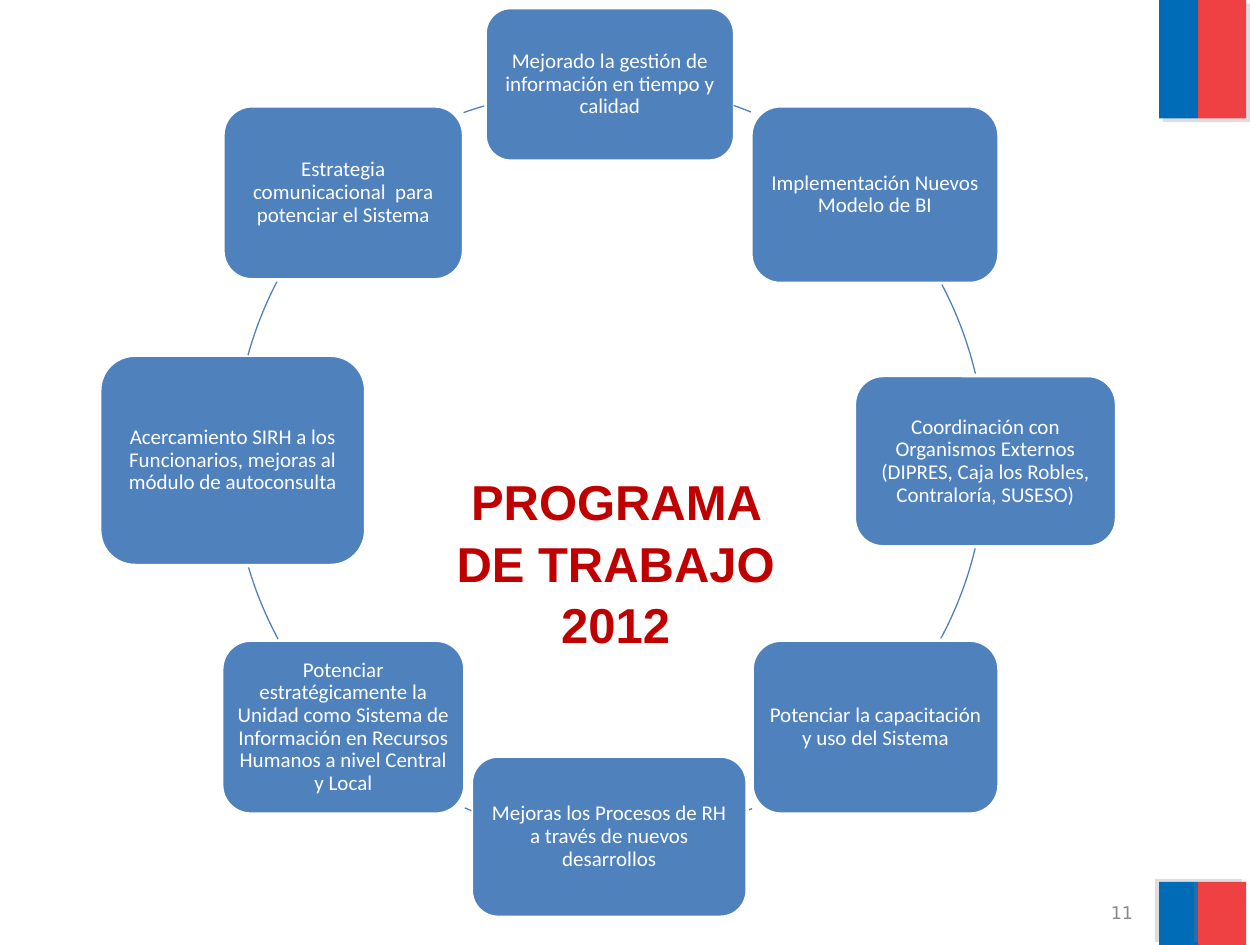
from dataclasses import dataclass
from typing import Any

from lxml import etree
from pptx import Presentation
from pptx import util as u
from pptx.dml.color import RGBColor
from pptx.enum import shapes, text
from pptx.oxml import ns

COLOURS = {
    "blue": "006CB7", "red": "EF4144", "shadow": "808080", "node": "4F81BD",
    "white": "FFFFFF", "title": "C00000", "number": "898989",
}


@dataclass
class CycleSlide:
    """Draws the elements of a cycle slide, with all lengths in points."""
    slide: Any
    font: str = "Calibri"
    node_size: float = 12
    inset: float = 3.6
    ring_size: float = 430

    def colour(self, name):
        return RGBColor.from_string(COLOURS[name])

    def shape(self, kind, box):
        shape = self.slide.shapes.add_shape(kind, *map(u.Pt, box))
        shape.shadow.inherit = False
        return shape

    def fill(self, shape, name):
        shape.fill.solid()
        shape.fill.fore_color.rgb = self.colour(name)

    def outline(self, shape, name, width):
        shape.line.color.rgb = self.colour(name)
        shape.line.width = u.Pt(width)

    def set_words(self, frame, words, size, name, font=None, bold=False,
                  align=text.PP_ALIGN.CENTER, spacing=1.0, after=0):
        frame.word_wrap = True
        paragraph = frame.paragraphs[0]
        paragraph.alignment = align
        paragraph.line_spacing = spacing
        paragraph.space_after = u.Pt(after)
        run = paragraph.add_run()
        run.text = words
        run.font.name = font or self.font
        run.font.size = u.Pt(size)
        run.font.bold = bold
        run.font.color.rgb = self.colour(name)

    def band(self, box, name, angle):
        band = self.shape(shapes.MSO_SHAPE.RECTANGLE, box)
        self.fill(band, name)
        band.line.fill.background()
        effects = band._element.spPr.find(ns.qn("a:effectLst"))
        shadow = etree.SubElement(effects, ns.qn("a:outerShdw"), blurRad="0",
                                  dist=str(u.Pt(3)), dir=str(angle * 60000),
                                  algn="ctr", rotWithShape="0")
        tint = etree.SubElement(shadow, ns.qn("a:srgbClr"), val=COLOURS["shadow"])
        etree.SubElement(tint, ns.qn("a:alpha"), val="25000")

    def label(self, box, words, size, name, font, anchor, **style):
        frame = self.slide.shapes.add_textbox(*map(u.Pt, box)).text_frame
        frame.vertical_anchor = anchor
        self.set_words(frame, words, size, name, font, **style)

    def node(self, box, words):
        node = self.shape(shapes.MSO_SHAPE.ROUNDED_RECTANGLE, box)
        self.fill(node, "node")
        self.outline(node, "white", 2)
        frame = node.text_frame
        frame.margin_left = frame.margin_right = u.Pt(self.inset)
        frame.margin_top = frame.margin_bottom = u.Pt(self.inset)
        frame.vertical_anchor = text.MSO_ANCHOR.MIDDLE
        self.set_words(frame, words, self.node_size, "white", spacing=0.9, after=4.2)

    def arc(self, corner, start, end):
        arc = self.shape(shapes.MSO_SHAPE.ARC, (*corner, self.ring_size, self.ring_size))
        arc.adjustments[0] = start * 0.6
        arc.adjustments[1] = end * 0.6
        arc.fill.background()
        self.outline(arc, "node", 0.75)


RING = (133.2, 48.2)
STEPS = [
    ((277.2, 4.3, 142.6, 87.8), "Mejorado la gestión de información en tiempo y calidad",
     RING, 289.3, 292.1),
    ((429.1, 60.5, 141.8, 101.5), "Implementación Nuevos Modelo de BI",
     RING, 332.1, 346.7),
    ((488.2, 214.6, 149.8, 97.9),
     "Coordinación con Organismos Externos (DIPRES, Caja los Robles, Contraloría, SUSESO)",
     RING, 13.5, 28.3),
    ((429.8, 365.8, 141.1, 99.4), "Potenciar la capacitación y uso del Sistema",
     RING, 67.7, 68.5),
    ((269.3, 432, 157.7, 92.2), "Mejoras los Procesos de RH a través de nuevos desarrollos",
     RING, 111.5, 112.6),
    ((126.7, 365.8, 139, 99.4),
     "Potenciar estratégicamente la Unidad como Sistema de Información en Recursos "
     "Humanos a nivel Central y Local",
     RING, 151.7, 163.6),
    ((57, 203, 152, 120.2),
     "Acercamiento SIRH a los Funcionarios, mejoras al módulo de autoconsulta",
     (133.9, 45.4), 195.5, 207.6),
    ((127.4, 60.5, 137.5, 99.4), "Estrategia comunicacional  para potenciar el Sistema",
     (122.4, 51.8), 250.3, 253.6),
]


def main():
    deck = Presentation()
    deck.slide_width, deck.slide_height = u.Pt(720), u.Pt(540)
    page = CycleSlide(deck.slides.add_slide(deck.slide_layouts[6]))

    for top, height, angle in ((0, 67.7, 45), (504, 36, 215)):
        page.band((662.4, top, 22.3, height), "blue", angle)
        page.band((684.7, top, 27.4, height), "red", angle)

    page.label((486.7, 514, 167.8, 15), "11", 10, "number", "DejaVu Sans",
               text.MSO_ANCHOR.MIDDLE, align=text.PP_ALIGN.RIGHT)
    page.label((247, 264.2, 209.5, 96.5), "PROGRAMA DE TRABAJO 2012", 28, "title",
               "Arial", text.MSO_ANCHOR.TOP, bold=True, spacing=1.05)

    for box, words, corner, start, end in STEPS:
        page.node(box, words)
        page.arc(corner, start, end)

    deck.save("out.pptx")


if __name__ == "__main__":
    main()
